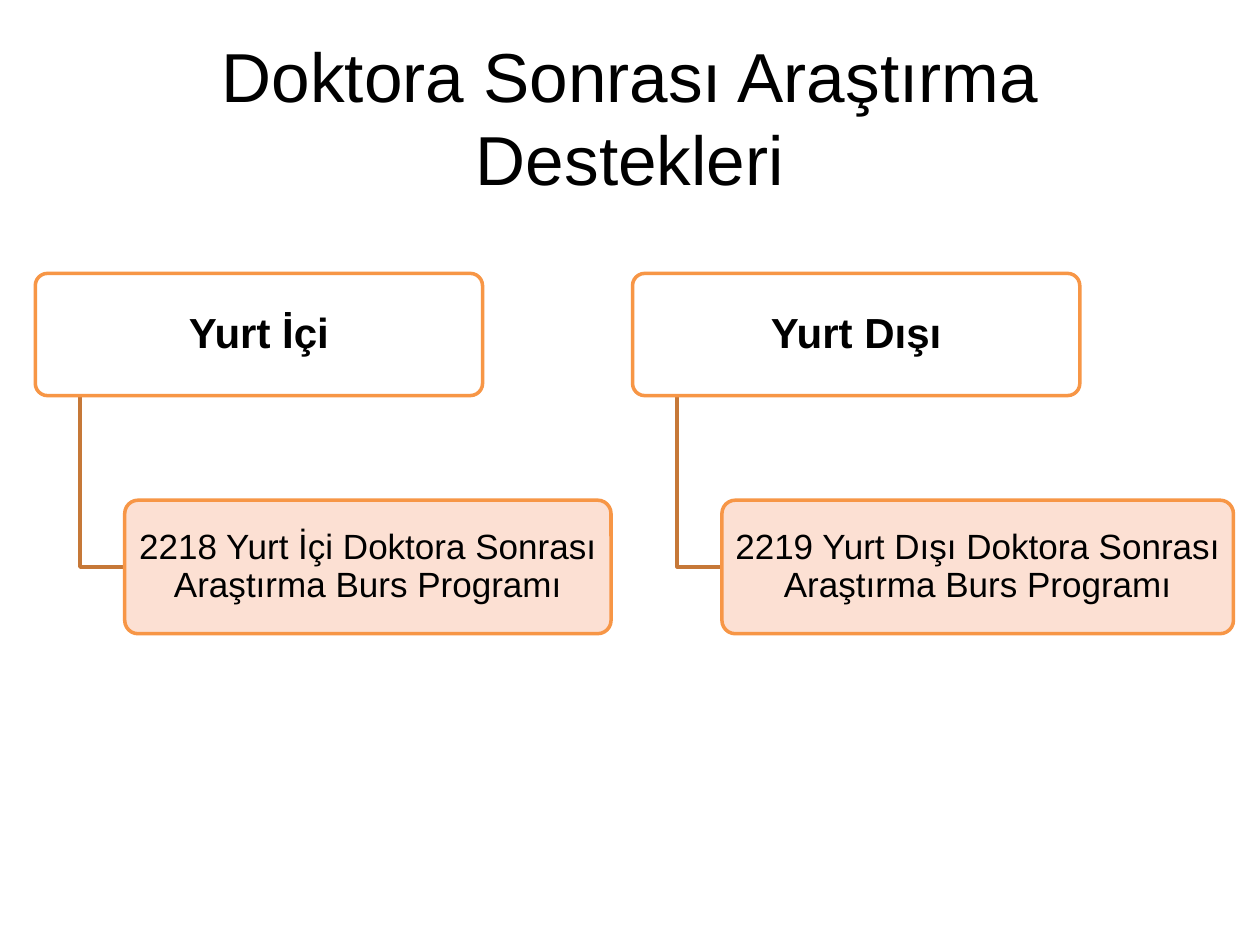
import pptx
import pptx.dml.color
import pptx.enum.shapes
import pptx.enum.text
import pptx.oxml
import pptx.oxml.ns
import pptx.util

Inches = pptx.util.Inches
Pt = pptx.util.Pt
COLORS = {"text": "000000", "heading": "FFFFFF", "program": "FCDDCF",
          "border": "F79646", "branch": "C67838"}


def rgb(name):
    return pptx.dml.color.RGBColor.from_string(COLORS[name])


def write(shape, text, size, inset, bold=False):
    """Put one centred paragraph in the middle of a shape."""
    frame = shape.text_frame
    frame.word_wrap = True
    frame.vertical_anchor = pptx.enum.text.MSO_ANCHOR.MIDDLE
    frame.margin_left = frame.margin_right = Inches(inset)
    frame.margin_top = frame.margin_bottom = Inches(0.03)
    frame.text = text
    paragraph = frame.paragraphs[0]
    paragraph.alignment = pptx.enum.text.PP_ALIGN.CENTER
    font = paragraph.runs[0].font
    font.name = "Arial"
    font.size = Pt(size)
    font.bold = bold
    font.color.rgb = rgb("text")
    return paragraph


deck = pptx.Presentation()
deck.slide_width = Inches(10)
deck.slide_height = Inches(7.5)
slide = deck.slides.add_slide(deck.slide_layouts[6])

title = slide.shapes.add_textbox(Inches(0.5), Inches(0.3), Inches(9), Inches(1.25))
write(title, "Doktora Sonrası Araştırma Destekleri", 39.6, 0.1)

# left edge, heading, program, program width
groups = [
    (0.28, "Yurt İçi", "2218 Yurt İçi Doktora Sonrası Araştırma Burs Programı", 3.86),
    (5.02, "Yurt Dışı", "2219 Yurt Dışı Doktora Sonrası Araştırma Burs Programı", 4.06),
]
heading_top, heading_width, heading_height = 2.17, 3.55, 0.97
program_top, program_height = 3.97, 1.06
step = 0.355

for left, heading, program, program_width in groups:
    branch_left = left + step
    program_left = branch_left + step
    branch_bottom = program_top + program_height / 2

    builder = slide.shapes.build_freeform(
        Inches(branch_left), Inches(heading_top + heading_height))
    builder.add_line_segments(
        [(Inches(branch_left), Inches(branch_bottom)),
         (Inches(program_left), Inches(branch_bottom))], close=False)
    branch = builder.convert_to_shape()
    branch.shadow.inherit = False
    branch.fill.background()
    branch.line.color.rgb = rgb("branch")
    branch.line.width = Pt(2)

    boxes = [
        (left, heading_top, heading_width, heading_height, "heading", heading, 24, 0.05),
        (program_left, program_top, program_width, program_height, "program", program, 20, 0.04),
    ]
    for x, y, width, height, role, text, size, inset in boxes:
        box = slide.shapes.add_shape(
            pptx.enum.shapes.MSO_SHAPE.ROUNDED_RECTANGLE,
            Inches(x), Inches(y), Inches(width), Inches(height))
        box.adjustments[0] = 0.1
        box.shadow.inherit = False
        box.fill.solid()
        box.fill.fore_color.rgb = rgb(role)
        box.line.color.rgb = rgb("border")
        box.line.width = Pt(2)
        if role == "program":
            fill_color = box.fill._xPr.find(pptx.oxml.ns.qn("a:solidFill"))[0]
            fill_color.append(pptx.oxml.parse_xml(
                f'<a:alpha {pptx.oxml.ns.nsdecls("a")} val="90000"/>'))
        write(box, text, size, inset, bold=role == "heading").line_spacing = 0.9

deck.save("out.pptx")
